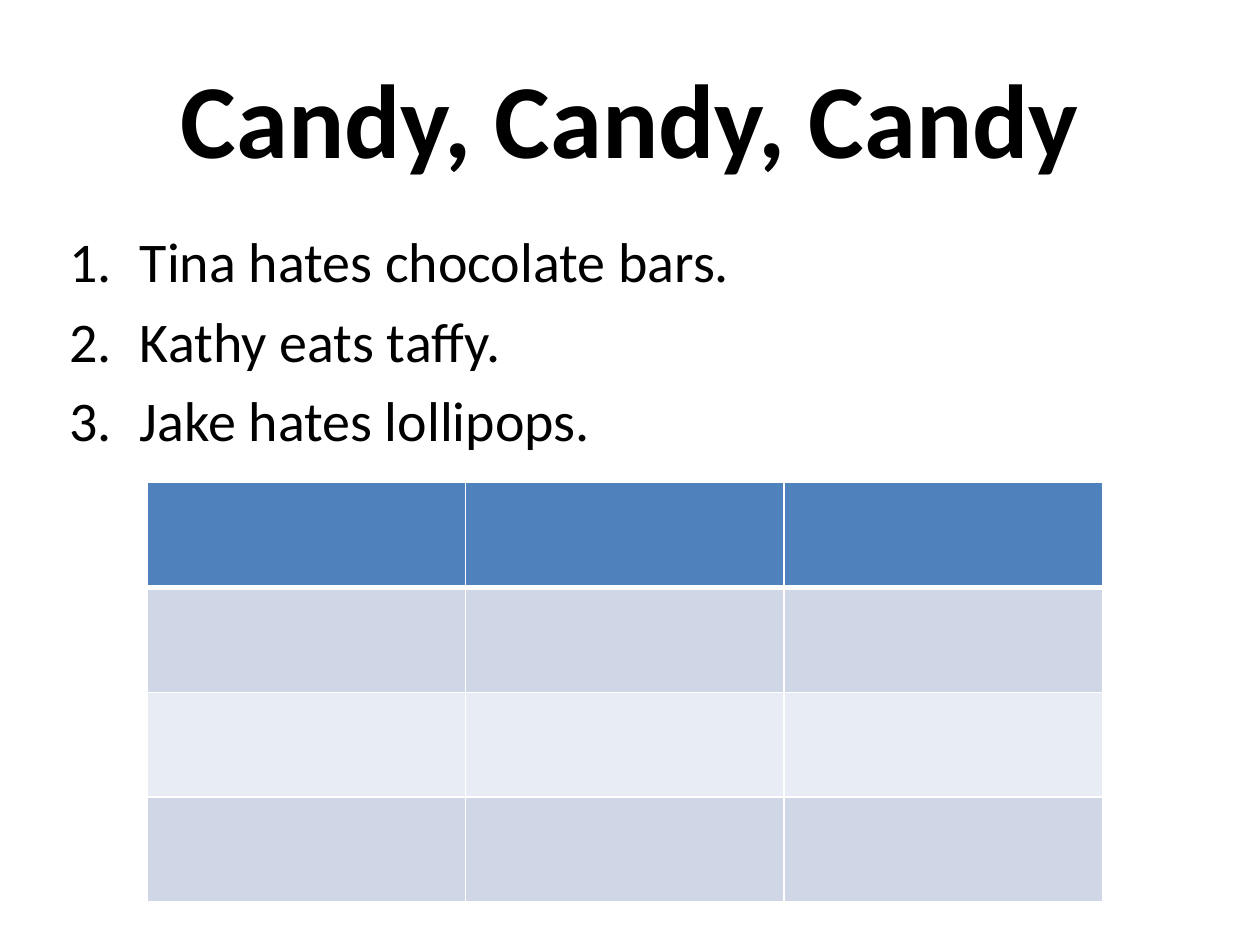
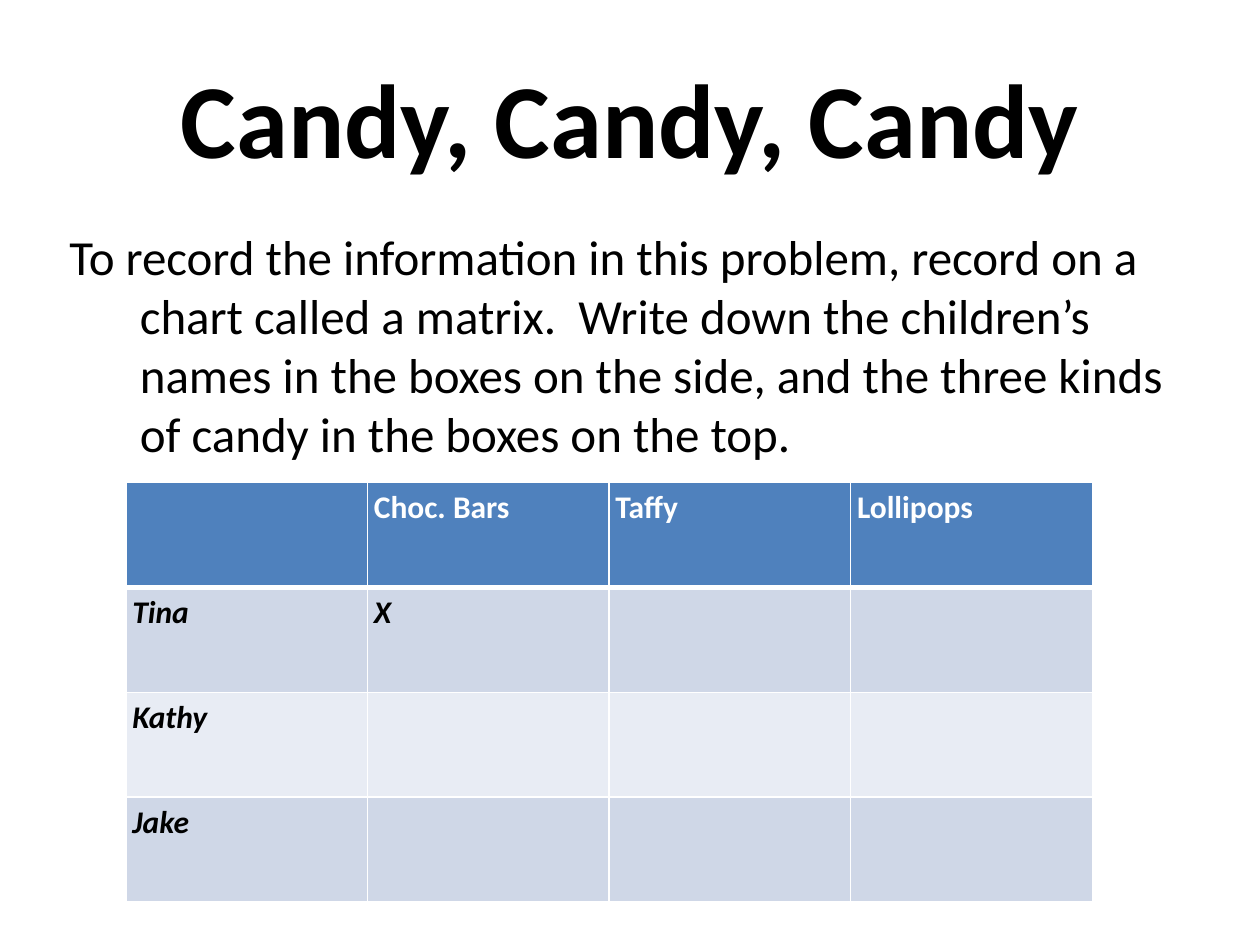
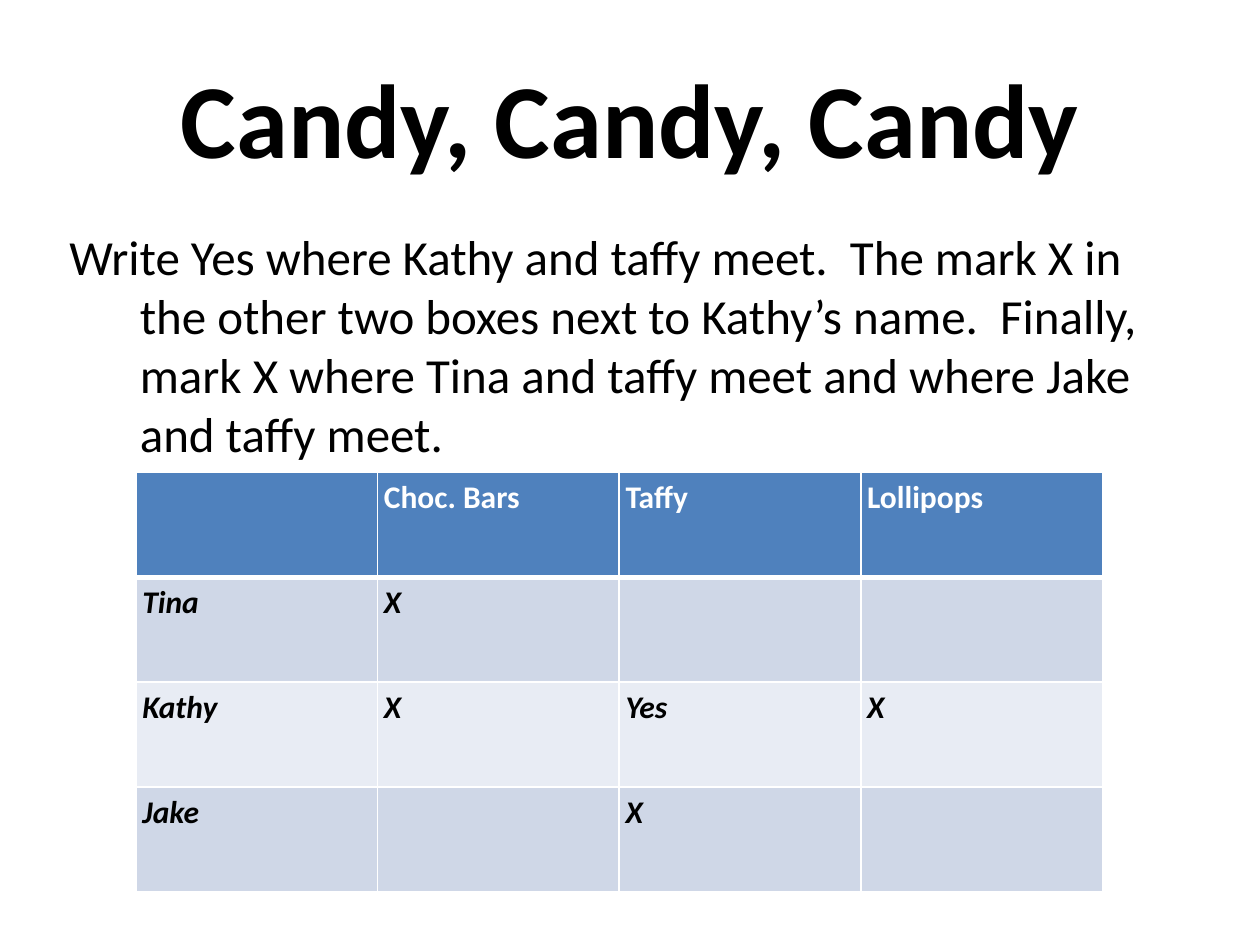
import pptx
import pptx.dml.color
import pptx.enum.text
import pptx.oxml
import pptx.oxml.ns
import pptx.util
from pptx.util import Inches

# Shared look
RGBColor = pptx.dml.color.RGBColor
BLACK = RGBColor(0x00, 0x00, 0x00)
WHITE = RGBColor(0xFF, 0xFF, 0xFF)
HEADER_BLUE = RGBColor(0x4F, 0x81, 0xBD)
BAND_DARK = RGBColor(0xCF, 0xD7, 0xE7)
BAND_LIGHT = RGBColor(0xE8, 0xEC, 0xF4)
FONT = "Calibri"
TITLE = "Candy, Candy, Candy"
MARGIN = 0.05
INDENT = 0.56
ROW_HEIGHT = 3.33 / 4

# Content
CANDIES = ["", "Choc. Bars", "Taffy", "Lollipops"]
SLIDES = [
    {
        "lines": ["Tina hates chocolate bars.", "Kathy eats taffy.", "Jake hates lollipops."],
        "numbered": True, "size": 32, "space": 7, "body_height": 4.95,
        "table_at": (1.17, 3.83), "table_width": 7.58,
        "rows": [[""] * 3] * 4,
    },
    {
        "lines": ["To record the information in this problem, record on a chart called a matrix.  "
                  "Write down the children’s names in the boxes on the side, and the three kinds "
                  "of candy in the boxes on the top."],
        "numbered": False, "size": 28, "space": 6, "body_height": 4.95,
        "table_at": (1, 3.83), "table_width": 7.67,
        "rows": [CANDIES, ["Tina", "X", "", ""], ["Kathy", "", "", ""], ["Jake", "", "", ""]],
    },
    {
        "lines": ["Write Yes where Kathy and taffy meet.  The mark X in the other two boxes next to "
                  "Kathy’s name.  Finally, mark X where Tina and taffy meet and where Jake and "
                  "taffy meet."],
        "numbered": False, "size": 28, "space": 6, "body_height": 5.5,
        "table_at": (1.08, 3.75), "table_width": 7.67,
        "rows": [CANDIES, ["Tina", "X", "", ""], ["Kathy", "X", "Yes", "X"], ["Jake", "", "X", ""]],
    },
]


def write(para, text, size, color=BLACK, bold=False, italic=False):
    span = para.add_run()
    span.text = text
    span.font.name = FONT
    span.font.size = pptx.util.Pt(size)
    span.font.color.rgb = color
    span.font.bold = bold
    span.font.italic = italic


def set_margins(target):
    for side in ("left", "top", "right", "bottom"):
        setattr(target, f"margin_{side}", Inches(MARGIN))


def place(box, left, top, width, height, anchor):
    box.left, box.top, box.width, box.height = map(Inches, (left, top, width, height))
    frame = box.text_frame
    set_margins(frame)
    frame.word_wrap = True
    frame.auto_size = pptx.enum.text.MSO_AUTO_SIZE.NONE
    frame.vertical_anchor = anchor
    return frame


def add_xml(parent, xml):
    head, tail = xml.split(" ", 1)
    parent.append(pptx.oxml.parse_xml(f"{head} {pptx.oxml.ns.nsdecls('a')} {tail}"))


def add_title(page):
    frame = place(page.shapes.title, 0.5, 0.3, 9, 1.25, pptx.enum.text.MSO_ANCHOR.MIDDLE)
    para = frame.paragraphs[0]
    para.alignment = pptx.enum.text.PP_ALIGN.CENTER
    write(para, TITLE, 60, bold=True)


def add_body(page, content):
    frame = place(page.placeholders[1], 0.5, 1.75, 9, content["body_height"],
                  pptx.enum.text.MSO_ANCHOR.TOP)
    for number, line in enumerate(content["lines"]):
        para = frame.add_paragraph() if number else frame.paragraphs[0]
        para.space_before = pptx.util.Pt(content["space"])
        properties = para._p.get_or_add_pPr()
        properties.set("marL", str(Inches(INDENT)))
        properties.set("indent", str(-Inches(INDENT)))
        add_xml(properties, '<a:buAutoNum type="arabicPeriod"/>' if content["numbered"]
                else "<a:buNone />")
        write(para, line, content["size"])


def set_borders(cell, **widths):
    properties = cell._tc.get_or_add_tcPr()
    for side in "LRTB":
        width = pptx.util.Pt(widths.get(side, 1))
        add_xml(properties, f'<a:ln{side} w="{width}"><a:solidFill>'
                            f'<a:srgbClr val="{WHITE}"/></a:solidFill></a:ln{side}>')


def add_matrix(page, content):
    rows = content["rows"]
    left, top = content["table_at"]
    columns = len(rows[0])
    width = content["table_width"]
    table = page.shapes.add_table(len(rows), columns, Inches(left), Inches(top),
                                  Inches(width), Inches(ROW_HEIGHT * len(rows))).table
    for column in table.columns:
        column.width = Inches(width / columns)
    for row_number, row in enumerate(rows):
        table.rows[row_number].height = Inches(ROW_HEIGHT)
        header = row_number == 0
        band = BAND_DARK if row_number % 2 else BAND_LIGHT
        for column_number, text in enumerate(row):
            cell = table.cell(row_number, column_number)
            set_margins(cell)
            # The heavy rule lies between the header and the first name
            set_borders(cell, B=3 if header else 1, T=3 if row_number == 1 else 1)
            cell.fill.solid()
            cell.fill.fore_color.rgb = HEADER_BLUE if header else band
            if text:
                write(cell.text_frame.paragraphs[0], text, 18, bold=True,
                      color=WHITE if header else BLACK, italic=not header)


def main():
    deck = pptx.Presentation()
    deck.slide_width, deck.slide_height = Inches(10), Inches(7.5)
    for content in SLIDES:
        page = deck.slides.add_slide(deck.slide_layouts[1])
        add_title(page)
        add_body(page, content)
        add_matrix(page, content)
    deck.save("out.pptx")


if __name__ == "__main__":
    main()
